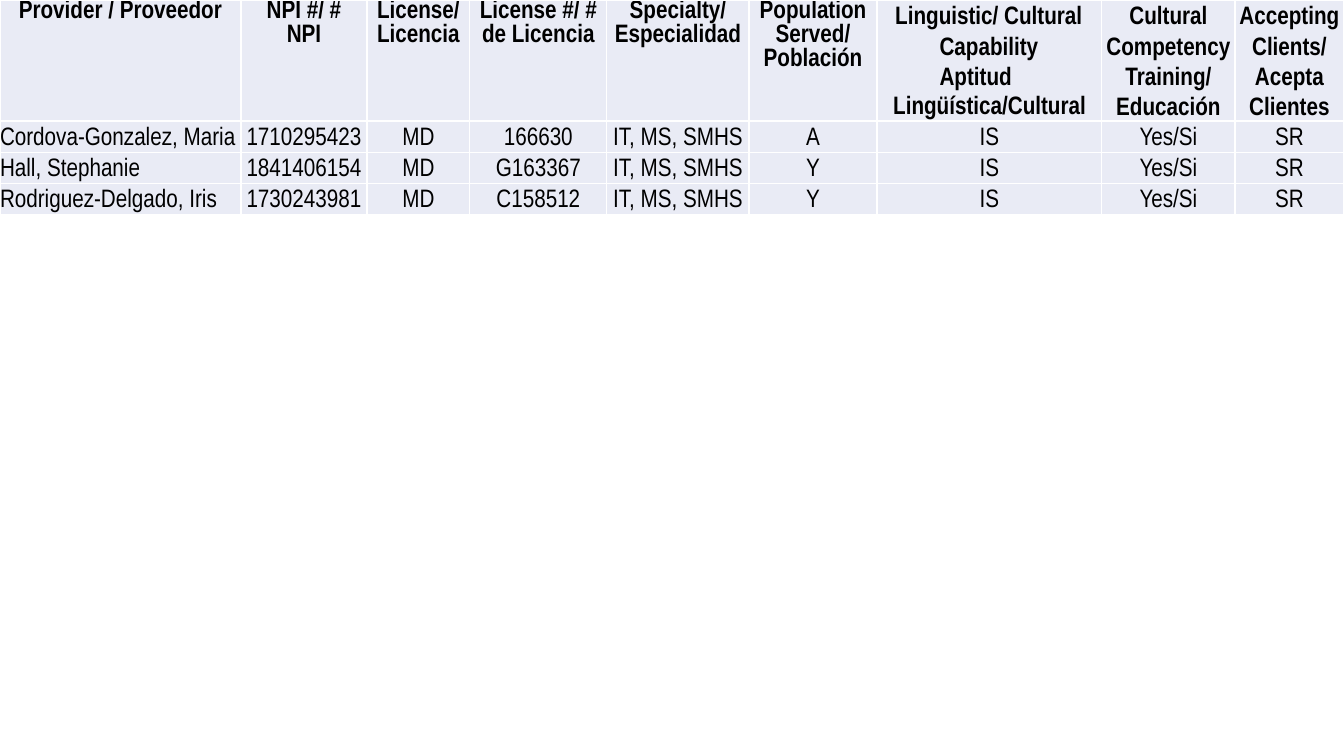
import pptx
import pptx.util
import pptx.dml.color
import pptx.enum.text
import pptx.oxml
import pptx.oxml.ns

Inches = pptx.util.Inches
Pt = pptx.util.Pt
ALIGN = pptx.enum.text.PP_ALIGN

COLORS = {"text": "000000", "cell": "E9EBF5", "border": "FFFFFF"}
FONT = "Arial Narrow"
BODY_SPACING = 21
COLUMN_WIDTHS = [2.39, 1.25, 1.02, 1.36, 1.41, 1.27, 2.23, 1.32, 1.08]
ROW_HEIGHTS = [1.2, 0.31, 0.31, 0.31]

TIGHT = {"spacing": 17.2, "before": 19.6}
LOOSE = {"spacing": 21.6}
HEADERS = [
    ("Provider / Proveedor", {**TIGHT, "before": 30.3}),
    ("NPI #/ # NPI", {**TIGHT, "side": 0.12}),
    ("License/ Licencia", TIGHT),
    ("License #/ # de Licencia", TIGHT),
    ("Specialty/ Especialidad", TIGHT),
    ("Population Served/ Población", {**TIGHT, "before": 10.3}),
    ("Linguistic/ Cultural Capability Aptitud",
     {**LOOSE, "align": ALIGN.LEFT, "left": 0.62, "first": -0.44}),
    ("Cultural Competency Training/ Educación", LOOSE),
    ("Accepting Clients/ Acepta Clientes", LOOSE),
]
LINGUISTIC_COLUMN = 6
LINGUISTIC_ENDING = "Lingüística/Cultural"

PROVIDERS = [
    ("Cordova-Gonzalez, Maria", "1710295423", "166630", "A"),
    ("Hall, Stephanie", "1841406154", "G163367", "Y"),
    ("Rodriguez-Delgado, Iris", "1730243981", "C158512", "Y"),
]


def write_text(para, text, *, bold=False, align=ALIGN.CENTER, spacing=BODY_SPACING,
               before=0, left=0, first=0):
    para.alignment = align
    para.line_spacing = Pt(spacing)
    para.space_before = Pt(before)
    properties = para._p.get_or_add_pPr()
    properties.set("marL", str(Inches(left)))
    properties.set("indent", str(Inches(first)))
    span = para.add_run()
    span.text = text
    span.font.name = FONT
    span.font.size = Pt(18)
    span.font.bold = bold
    span.font.color.rgb = pptx.dml.color.RGBColor.from_string(COLORS["text"])


def style_cell(cell, side=0):
    cell.margin_left = cell.margin_right = Inches(side)
    cell.margin_top = cell.margin_bottom = 0
    properties = cell._tc.get_or_add_tcPr()
    for edge in ("lnL", "lnR", "lnT", "lnB"):
        properties.append(pptx.oxml.parse_xml(
            f'<a:{edge} {pptx.oxml.ns.nsdecls("a")} w="{Pt(1)}"><a:solidFill>'
            f'<a:srgbClr val="{COLORS["border"]}"/></a:solidFill></a:{edge}>'))
    cell.fill.solid()
    cell.fill.fore_color.rgb = pptx.dml.color.RGBColor.from_string(COLORS["cell"])


def fill_header(table):
    for column, (text, options) in enumerate(HEADERS):
        cell = table.cell(0, column)
        options = dict(options)
        style_cell(cell, options.pop("side", 0))
        write_text(cell.text_frame.paragraphs[0], text, bold=True, **options)
    ending = table.cell(0, LINGUISTIC_COLUMN).text_frame.add_paragraph()
    write_text(ending, LINGUISTIC_ENDING, bold=True, align=ALIGN.LEFT,
               spacing=20.6, left=0.16)


def fill_providers(table):
    for row, (name, npi, license_number, population) in enumerate(PROVIDERS, 1):
        values = [name, npi, "MD", license_number, "IT, MS, SMHS", population,
                  "IS", "Yes/Si", "SR"]
        for column, value in enumerate(values):
            cell = table.cell(row, column)
            style_cell(cell)
            write_text(cell.text_frame.paragraphs[0], value,
                       align=ALIGN.CENTER if column else ALIGN.LEFT)


def add_provider_table(page, left, top, width, height):
    table = page.shapes.add_table(
        len(ROW_HEIGHTS), len(COLUMN_WIDTHS), Inches(left), Inches(top),
        Inches(width), Inches(height)).table
    table.first_row = False
    table.horz_banding = False
    for column, share in zip(table.columns, COLUMN_WIDTHS):
        column.width = Inches(width * share / sum(COLUMN_WIDTHS))
    for row, share in zip(table.rows, ROW_HEIGHTS):
        row.height = Inches(height * share / sum(ROW_HEIGHTS))
    fill_header(table)
    fill_providers(table)


def main():
    deck = pptx.Presentation()
    deck.slide_width = Inches(13.33)
    deck.slide_height = Inches(7.5)
    page = deck.slides.add_slide(deck.slide_layouts[6])
    add_provider_table(page, 0, 0, 13.33, 2.13)
    deck.save("out.pptx")


if __name__ == "__main__":
    main()
